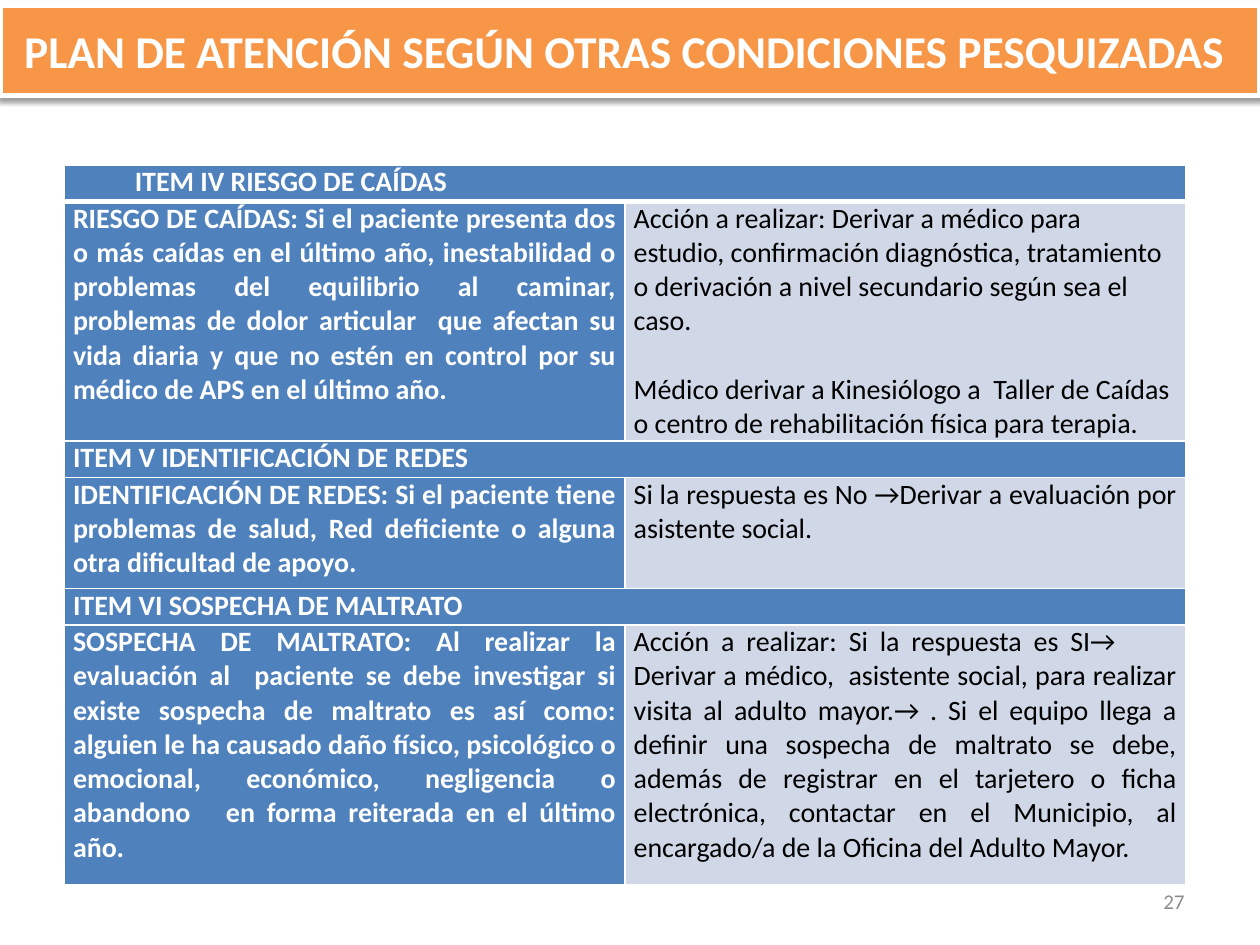
from lxml import etree
from pptx import Presentation
from pptx import util as u
from pptx.dml.color import RGBColor
from pptx.enum import text
from pptx.oxml import parse_xml
from pptx.oxml.ns import nsdecls

THEME = dict(font="Calibri", head=26, body=16, page=12,
             orange="F79646", blue="4F81BD", pale="D0D8E8",
             white="FFFFFF", black="000000", gray="8C8C8C")
LEFT, JUST = text.PP_ALIGN.LEFT, text.PP_ALIGN.JUSTIFY
TITLE = "PLAN DE ATENCIÓN SEGÚN OTRAS CONDICIONES PESQUIZADAS "
PAGE = "27"
COLS = (4.45, 4.45)
BAND = 0.29

ITEMS = [
    dict(name="ITEM IV RIESGO DE CAÍDAS", indent=0.49, high=1.87, align=LEFT,
         case="RIESGO DE CAÍDAS: Si el paciente presenta dos o más caídas en el "
              "último año, inestabilidad o problemas del equilibrio al caminar, "
              "problemas de dolor articular  que afectan su vida diaria y que no "
              "estén en control por su médico de APS en el último año.",
         acts=["Acción a realizar: Derivar a médico para estudio, confirmación "
               "diagnóstica, tratamiento o derivación a nivel secundario según "
               "sea el caso.",
               "Médico derivar a Kinesiólogo a  Taller de Caídas o centro de "
               "rehabilitación física para terapia."]),
    dict(name="ITEM V IDENTIFICACIÓN DE REDES", indent=0, high=0.88, align=JUST,
         case="IDENTIFICACIÓN DE REDES: Si el paciente tiene problemas de salud, "
              "Red deficiente o alguna otra dificultad de apoyo. ",
         acts=["Si la respuesta es No →Derivar a evaluación por asistente social."]),
    dict(name="ITEM VI SOSPECHA DE MALTRATO", indent=0, high=2.06, align=JUST,
         case="SOSPECHA DE MALTRATO: Al realizar la evaluación al  paciente se debe "
              "investigar si existe sospecha de maltrato es así como: alguien le ha "
              "causado daño físico, psicológico o emocional, económico, negligencia "
              "o abandono   en forma reiterada en el último año.",
         acts=["Acción a realizar: Si la respuesta es SI→\tDerivar a médico,  "
               "asistente social, para realizar visita al adulto mayor.→ . Si el "
               "equipo llega a definir una sospecha de maltrato se debe, además de "
               "registrar en el tarjetero o ficha electrónica, contactar en el "
               "Municipio, al encargado/a de la Oficina del Adulto Mayor."]),
]


def rgb(key):
    return RGBColor.from_string(THEME[key])


def paint(obj, key):
    obj.fill.solid()
    obj.fill.fore_color.rgb = rgb(key)


def write(para, words, size, color, bold=False, align=LEFT):
    para.alignment = align
    run = para.add_run()
    run.text = words
    font = run.font
    font.name, font.size, font.bold = THEME["font"], u.Pt(THEME[size]), bold
    font.color.rgb = rgb(color)


def place(shape, left, top, width, height):
    shape.left, shape.top = u.Inches(left), u.Inches(top)
    shape.width, shape.height = u.Inches(width), u.Inches(height)


def shade(shape):
    """Give the shape a soft shadow falling straight down."""
    shape._element.spPr.append(parse_xml(
        f'<a:effectLst {nsdecls("a")}><a:outerShdw blurRad="{u.Pt(3.1)}" '
        f'dist="{u.Pt(1.6)}" dir="5400000" rotWithShape="0">'
        f'<a:srgbClr val="{THEME["black"]}"><a:alpha val="38000"/></a:srgbClr>'
        '</a:outerShdw></a:effectLst>'))


def edge(cell, **wide):
    """Draw white cell borders, 1 pt unless a side is named."""
    props = cell._tc.get_or_add_tcPr()
    for spot, side in enumerate("LRTB"):
        line = parse_xml(
            f'<a:ln{side} {nsdecls("a")} w="{u.Pt(wide.get(side, 1))}"/>')
        fill = etree.SubElement(line, line.tag.replace(f"ln{side}", "solidFill"))
        etree.SubElement(fill, fill.tag.replace("solidFill", "srgbClr"),
                         val=THEME["white"])
        props.insert(spot, line)


def fill_cell(cell, lines, color, align, back, bold):
    paint(cell, back)
    cell.margin_left = cell.margin_right = u.Inches(0.07)
    cell.margin_top = cell.margin_bottom = 0
    frame = cell.text_frame
    for i, words in enumerate(lines):
        para = frame.add_paragraph() if i else frame.paragraphs[0]
        if i:
            para.space_before = u.Pt(19.5)
        write(para, words, "body", color, bold, align)


def add_head(slide):
    head = slide.shapes.title
    place(head, 0, 0.04, 10, 0.72)
    paint(head, "orange")
    head.line.color.rgb = rgb("white")
    head.line.width = u.Pt(3)
    shade(head)
    frame = head.text_frame
    frame.auto_size = text.MSO_AUTO_SIZE.NONE
    frame.word_wrap = True
    frame.vertical_anchor = text.MSO_ANCHOR.MIDDLE
    write(frame.paragraphs[0], TITLE, "head", "white", True, text.PP_ALIGN.CENTER)


def add_plan(slide):
    highs = [h for item in ITEMS for h in (BAND, item["high"])]
    grid = slide.shapes.add_table(
        len(highs), len(COLS), u.Inches(0.51), u.Inches(1.31),
        u.Inches(sum(COLS)), u.Inches(sum(highs))).table
    for col, width in zip(grid.columns, COLS):
        col.width = u.Inches(width)
    for row, high in zip(grid.rows, highs):
        row.height = u.Inches(high)
    for i, item in enumerate(ITEMS):
        band, side = grid.cell(2 * i, 0), grid.cell(2 * i, 1)
        case, act = grid.cell(2 * i + 1, 0), grid.cell(2 * i + 1, 1)
        band.merge(side)
        fill_cell(band, [item["name"]], "white", LEFT, "blue", True)
        if item["indent"]:
            props = band.text_frame.paragraphs[0]._p.get_or_add_pPr()
            props.set("marL", str(u.Inches(item["indent"])))
        fill_cell(case, [item["case"]], "white", JUST, "blue", True)
        fill_cell(act, item["acts"], "black", item["align"], "pale", False)
        rule = 1 if i else 3
        for cell in (band, side):
            edge(cell, B=rule)
        for cell in (case, act):
            edge(cell, T=rule)


def add_page(slide):
    box = slide.shapes.add_textbox(*map(u.Inches, (7.17, 6.95, 2.33, 0.4)))
    frame = box.text_frame
    frame.word_wrap = True
    frame.vertical_anchor = text.MSO_ANCHOR.MIDDLE
    write(frame.paragraphs[0], PAGE, "page", "gray", align=text.PP_ALIGN.RIGHT)


def main():
    deck = Presentation()
    deck.slide_width, deck.slide_height = u.Inches(10), u.Inches(7.5)
    slide = deck.slides.add_slide(deck.slide_layouts[5])
    add_head(slide)
    add_plan(slide)
    add_page(slide)
    deck.save("out.pptx")


if __name__ == "__main__":
    main()
